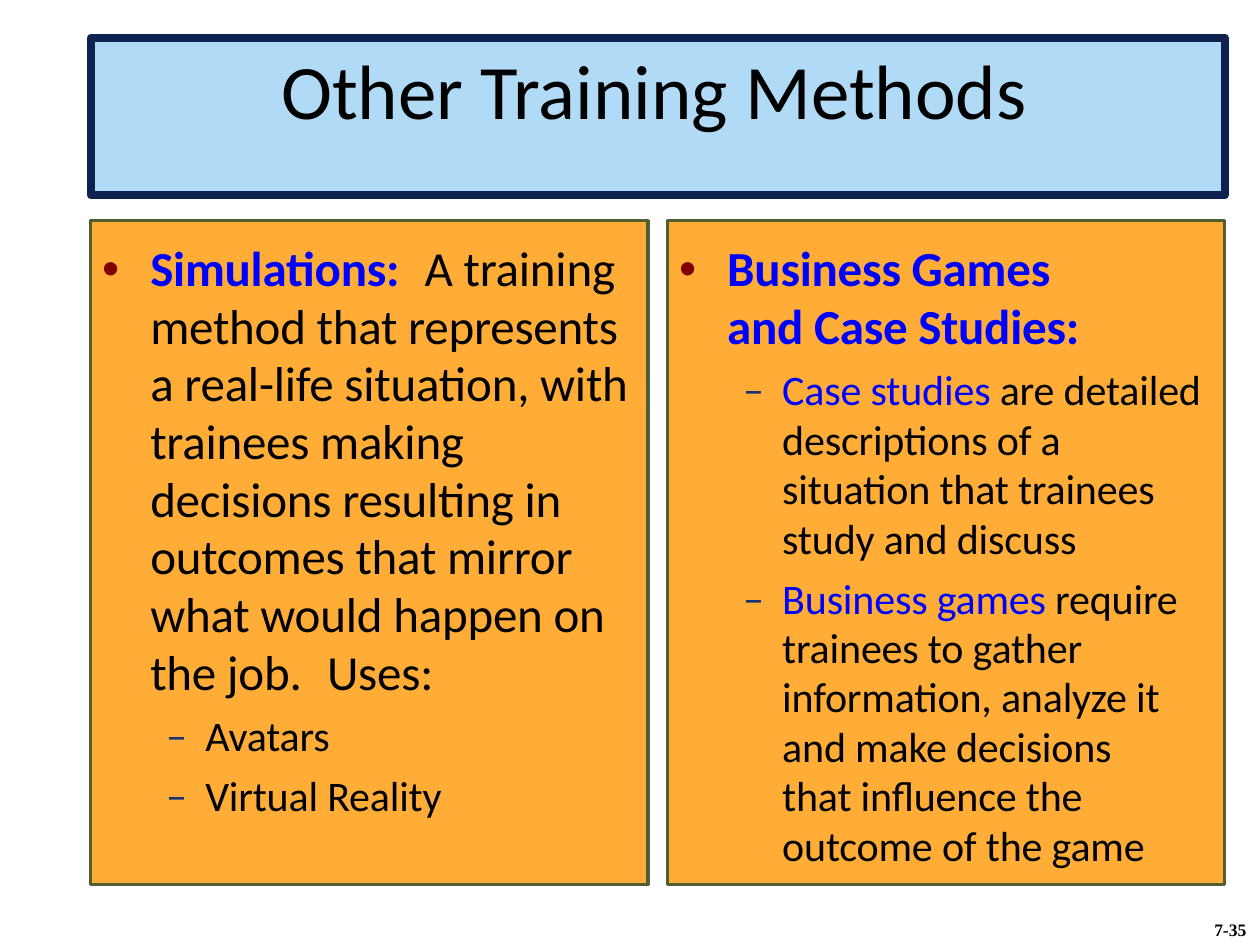
from lxml.etree import SubElement
from pptx import Presentation
from pptx.dml.color import RGBColor
from pptx.enum.shapes import MSO_SHAPE
from pptx.enum.text import MSO_ANCHOR, MSO_AUTO_SIZE, PP_ALIGN
from pptx.oxml.ns import qn
from pptx.util import Cm, Pt

BLACK, BLUE = "000000", "0000FF"
TIGHT, WIDE = -10, 800
BREAK = ("\n", BLACK, False)
GAP = (" ", BLACK, False)

LEVELS = [
    {"size": 28, "left": 0.97, "hang": 0.97, "before": 0,
     "mark": "•", "mark_font": "Arial", "mark_color": "7F0000"},
    {"size": 24, "left": 2.08, "hang": 0.79, "before": 6,
     "mark": "–", "mark_font": "Calibri", "mark_color": "193273"},
]

SIMULATIONS = [
    (0, [("Simulations:", BLUE, True), GAP,
         ("A training method that represents a real-life situation, with trainees "
          "making decisions resulting in outcomes that mirror what would happen on "
          "the job.", BLACK, False), GAP, ("Uses:", BLACK, False)]),
    (1, [("Avatars", BLACK, False)]),
    (1, [("Virtual Reality", BLACK, False)]),
]

GAMES_AND_CASES = [
    (0, [("Business Games", BLUE, True), BREAK, ("and Case Studies:", BLUE, True)]),
    (1, [("Case studies ", BLUE, False),
         ("are detailed descriptions of a situation that trainees study and discuss",
          BLACK, False)]),
    (1, [("Business games ", BLUE, False),
         ("require trainees to gather information, analyze it and make decisions",
          BLACK, False), BREAK,
         ("that influence the outcome of the game", BLACK, False)]),
]


def color(value):
    return RGBColor.from_string(value)


def paint(shape, fill, line, width):
    shape.fill.solid()
    shape.fill.fore_color.rgb = color(fill)
    shape.line.color.rgb = color(line)
    shape.line.width = Pt(width)


def set_frame(text_frame, left=0, top=0, right=0):
    text_frame.word_wrap = True
    text_frame.auto_size = MSO_AUTO_SIZE.NONE
    text_frame.vertical_anchor = MSO_ANCHOR.TOP
    text_frame.margin_left = Cm(left)
    text_frame.margin_top = Cm(top)
    text_frame.margin_right = Cm(right)
    text_frame.margin_bottom = 0


def set_font(font, name, size, text_color, bold=False):
    font.name = name
    font.size = Pt(size)
    font.bold = bold
    font.color.rgb = color(text_color)


def set_bullet(paragraph, level):
    properties = paragraph._p.get_or_add_pPr()
    properties.set("marL", str(Cm(level["left"])))
    properties.set("indent", str(-Cm(level["hang"])))
    bullet_color = SubElement(properties, qn("a:buClr"))
    SubElement(bullet_color, qn("a:srgbClr"), val=level["mark_color"])
    SubElement(properties, qn("a:buFont"), typeface=level["mark_font"])
    SubElement(properties, qn("a:buChar"), char=level["mark"])


def add_title(slide, left, top, width, height):
    title = slide.shapes.title
    title.left, title.top, title.width, title.height = map(Cm, (left, top, width, height))
    paint(title, "B0DAF5", "0F214E", 4.5)
    set_frame(title.text_frame, top=0.09, right=0.14)
    title.text_frame.text = "Other Training Methods"
    paragraph = title.text_frame.paragraphs[0]
    paragraph.alignment = PP_ALIGN.CENTER
    set_font(paragraph.runs[0].font, "Calibri", 44, BLACK)


def add_panel(slide, left, top, width, height, items):
    panel = slide.shapes.add_shape(
        MSO_SHAPE.RECTANGLE, Cm(left), Cm(top), Cm(width), Cm(height))
    panel.shadow.inherit = False
    paint(panel, "FFAD36", "535D32", 2)
    text_frame = panel.text_frame
    set_frame(text_frame, left=0.23, top=0.4, right=0.3)
    for index, (depth, pieces) in enumerate(items):
        level = LEVELS[depth]
        paragraph = text_frame.add_paragraph() if index else text_frame.paragraphs[0]
        set_bullet(paragraph, level)
        paragraph.alignment = PP_ALIGN.LEFT
        paragraph.line_spacing = 0.98
        paragraph.space_before = Pt(level["before"])
        for piece in pieces:
            if piece == BREAK:
                paragraph.add_line_break()
                continue
            text, text_color, bold = piece
            run = paragraph.add_run()
            run.text = text
            set_font(run.font, "Calibri", level["size"], text_color, bold)
            run._r.get_or_add_rPr().set("spc", str(WIDE if piece == GAP else TIGHT))


def add_page_number(slide, left, top, width, height):
    box = slide.shapes.add_textbox(Cm(left), Cm(top), Cm(width), Cm(height))
    set_frame(box.text_frame)
    box.text_frame.text = "7-35"
    set_font(box.text_frame.paragraphs[0].runs[0].font, "Times New Roman", 10, BLACK, True)


def main():
    presentation = Presentation()
    presentation.slide_width, presentation.slide_height = Cm(25.4), Cm(19.05)
    slide = presentation.slides.add_slide(presentation.slide_layouts[5])
    left, width, panel_width = 1.83, 22.86, 11.23
    add_title(slide, left, 0.76, width, 3.18)
    for index, items in enumerate((SIMULATIONS, GAMES_AND_CASES)):
        panel_left = left + index * (width - panel_width)
        add_panel(slide, panel_left, 4.45, panel_width, 13.38, items)
    add_page_number(slide, 24.48, 18.52, 0.8, 0.43)
    presentation.save("out.pptx")


if __name__ == "__main__":
    main()
